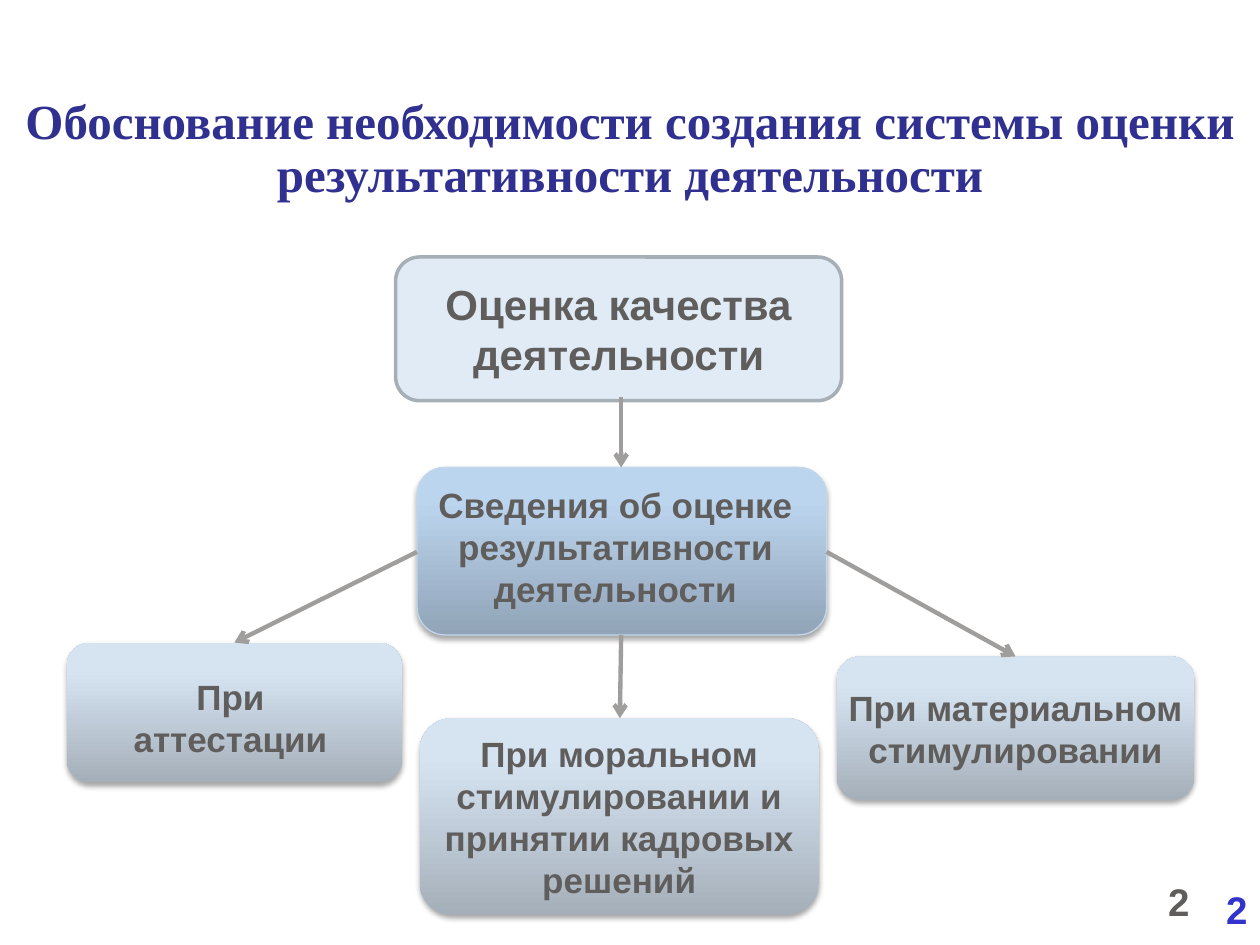
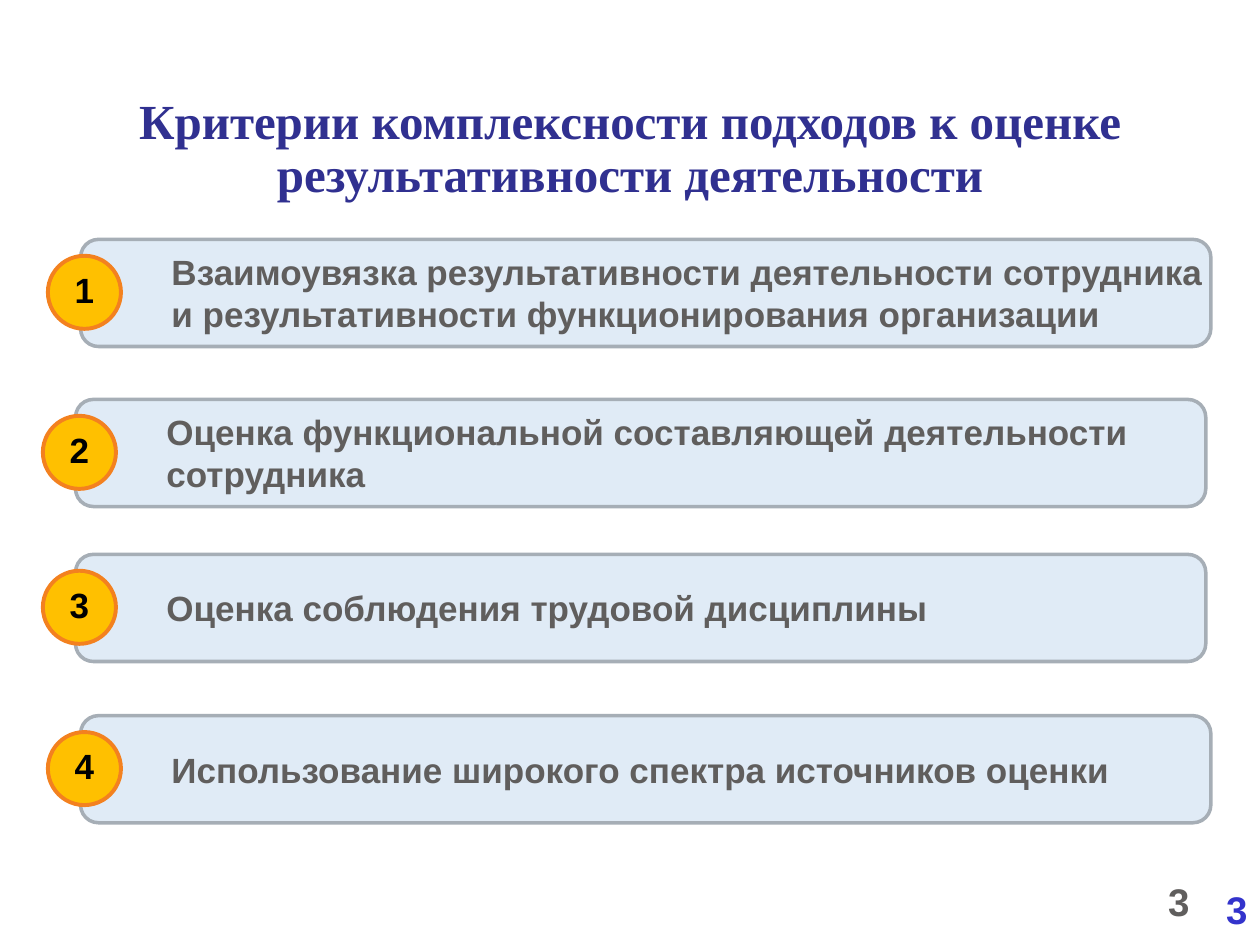
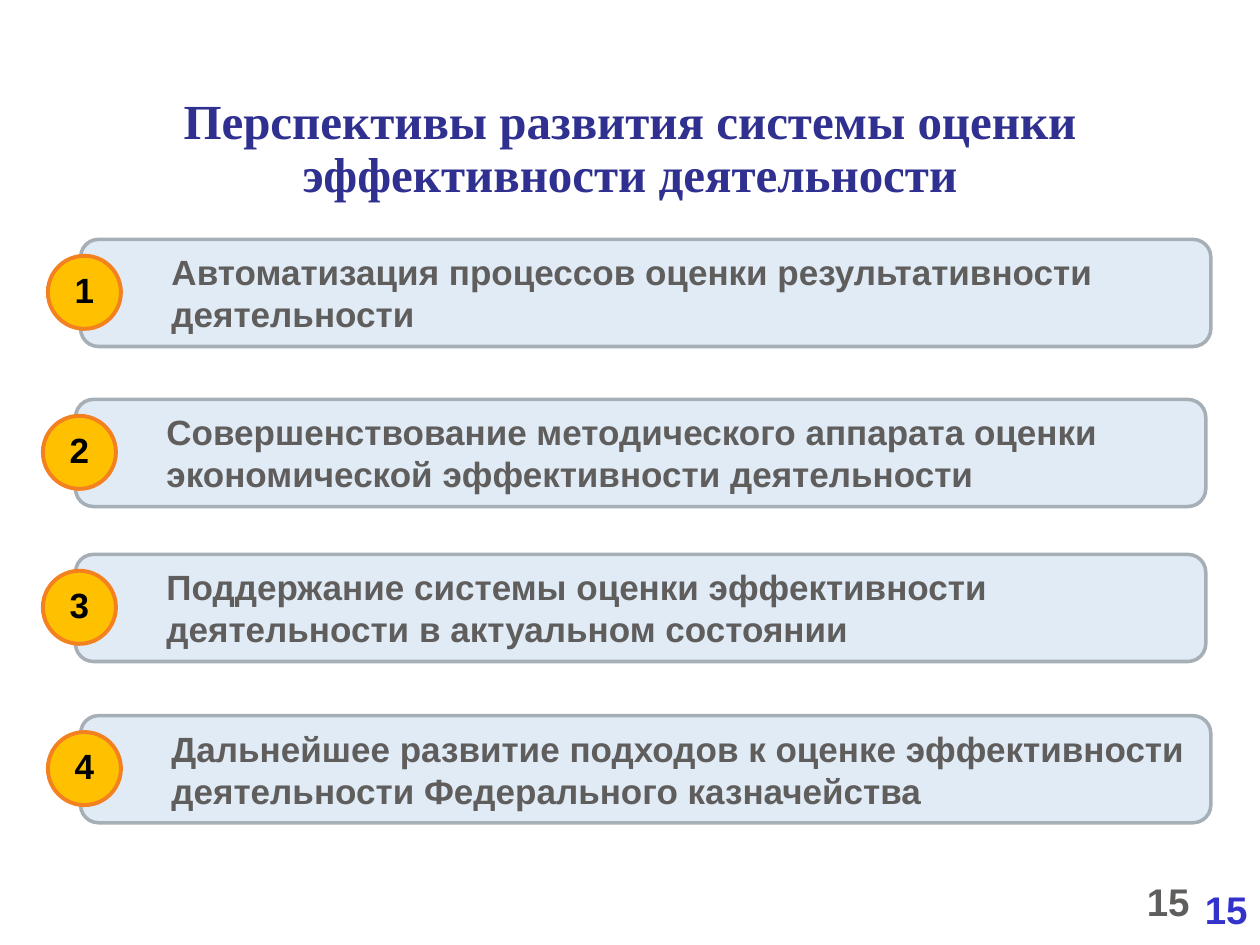
from lxml import etree
from pptx import Presentation
from pptx.dml.color import RGBColor
from pptx.enum import shapes, text
from pptx.oxml import parse_xml
from pptx.oxml.ns import nsdecls, qn
from pptx.util import Inches, Pt

TITLE_BLUE = RGBColor(0x30, 0x30, 0x90)
NUMBER_BLUE = RGBColor(0x33, 0x33, 0xCC)
TEXT_GRAY = RGBColor(0x60, 0x5E, 0x5D)
ARROW_GRAY = RGBColor(0xA0, 0x9E, 0x9D)
BLACK = RGBColor(0, 0, 0)
PANEL_FILL = RGBColor(0xE0, 0xEB, 0xF6)
PANEL_LINE = RGBColor(0xA6, 0xAE, 0xB6)
BADGE_FILL = RGBColor(0xFF, 0xC0, 0x00)
BADGE_LINE = RGBColor(0xF3, 0x81, 0x1F)
GRAY_DARK = RGBColor(0xA5, 0xAF, 0xBA)
GRAY_LIGHT = RGBColor(0xD6, 0xE4, 0xF2)
BLUE_DARK = RGBColor(0x91, 0xA4, 0xB8)
BLUE_LIGHT = RGBColor(0xBC, 0xD5, 0xEE)
BLUE_LINE = RGBColor(0xC3, 0xD7, 0xEC)

ALIGN = text.PP_ALIGN
ROUNDED = shapes.MSO_SHAPE.ROUNDED_RECTANGLE
SOFT_SHADOW = (
    f'<a:effectLst {nsdecls("a")}><a:outerShdw blurRad="40000" dist="23000" dir="5400000" '
    'rotWithShape="0"><a:srgbClr val="000000"><a:alpha val="35000"/></a:srgbClr>'
    '</a:outerShdw></a:effectLst>'
)


def write_text(box, words, size=20, color=TEXT_GRAY, font="Arial", align=ALIGN.CENTER,
               spacing=1.0, wrap=True, anchor=text.MSO_ANCHOR.MIDDLE):
    """Fill a box with bold text, one paragraph per line of words."""
    frame = box.text_frame
    frame.text = words
    frame.word_wrap = wrap
    frame.vertical_anchor = anchor
    for para in frame.paragraphs:
        para.alignment = align
        para.line_spacing = spacing
        for span in para.runs:
            span.font.name = font
            span.font.size = Pt(size)
            span.font.bold = True
            span.font.color.rgb = color


def add_flat_shape(parent, kind, place, fill, line, width):
    shape = parent.shapes.add_shape(kind, *map(Inches, place))
    shape.shadow.inherit = False
    shape.fill.solid()
    shape.fill.fore_color.rgb = fill
    shape.line.color.rgb = line
    shape.line.width = Pt(width)
    return shape


deck = Presentation()
deck.slide_width, deck.slide_height = Inches(10), Inches(7.5)

# Title and page numbers shared by every slide
headings = [
    ("Обоснование необходимости создания системы оценки результативности деятельности", 2),
    ("Критерии комплексности подходов к оценке результативности деятельности", 3),
    ("Перспективы развития системы оценки эффективности деятельности", 15),
]
pages = []
for heading, number in headings:
    page = deck.slides.add_slide(deck.slide_layouts[6])
    pages.append(page)
    title = page.shapes.add_textbox(0, Inches(0.94), Inches(10), Inches(0.97))
    title.text_frame.margin_bottom = Inches(0.52)
    write_text(title, heading, 28, TITLE_BLUE, "Times New Roman", spacing=0.9)
    for left, top, color in [(8.91, 6.92, TEXT_GRAY), (9.37, 6.98, NUMBER_BLUE)]:
        box = page.shapes.add_textbox(*map(Inches, (left, top, 0.63, 0.52)))
        write_text(box, str(number), 22, color, align=ALIGN.RIGHT, anchor=text.MSO_ANCHOR.TOP)

# Slide 1: flow from assessment to its uses
flow = pages[0]
source = add_flat_shape(flow, ROUNDED, (3.14, 2.04, 3.54, 1.14), PANEL_FILL, PANEL_LINE, 2)
write_text(source, "Оценка качества\nдеятельности", 24, wrap=False)

flow_boxes = [
    ((6.64, 5.21, 2.84, 1.14), GRAY_DARK, GRAY_LIGHT, "При материальном\nстимулировании"),
    ((0.53, 5.1, 2.66, 1.11), GRAY_DARK, GRAY_LIGHT, ""),
    ((3.31, 3.71, 3.25, 1.33), BLUE_DARK, BLUE_LIGHT, ""),
    ((3.33, 5.7, 3.17, 1.56), GRAY_DARK, GRAY_LIGHT,
     "При моральном\nстимулировании и\nпринятии кадровых\nрешений"),
]
for place, dark, light, words in flow_boxes:
    box = add_flat_shape(flow, ROUNDED, place, light, BLUE_LINE, 0.75)
    box.fill.gradient()
    box.fill.gradient_angle = 90
    for stop, color, position in zip(box.fill.gradient_stops, (dark, light), (0, 0.8)):
        stop.color.rgb = color
        stop.position = position
    if dark == GRAY_DARK:
        box.line.fill.background()
    properties = box._element.spPr
    properties.replace(properties.find(qn("a:effectLst")), parse_xml(SOFT_SHADOW))
    if words:
        write_text(box, words, wrap=False)

flow_labels = [
    ((0.85, 5.31, 1.96, 0.77), "При\nаттестации"),
    ((3.26, 3.78, 3.25, 1.11), "Сведения об оценке результативности деятельности"),
]
for place, words in flow_labels:
    write_text(flow.shapes.add_textbox(*map(Inches, place)), words)

arrows = [
    (4.93, 5.04, 4.92, 5.7),
    (3.31, 4.38, 1.86, 5.1),
    (6.56, 4.38, 8.06, 5.21),
    (4.93, 3.15, 4.93, 3.71),
]
for ends in arrows:
    arrow = flow.shapes.add_connector(shapes.MSO_CONNECTOR.STRAIGHT, *map(Inches, ends))
    arrow.line.color.rgb = ARROW_GRAY
    arrow.line.width = Pt(2.5)
    etree.SubElement(arrow.line._get_or_add_ln(), qn("a:tailEnd"), type="arrow")
    etree.SubElement(arrow._element.spPr, qn("a:effectLst"))

# Slides 2 and 3: numbered bars
bar_places = [(0.64, 1.9), (0.6, 3.17), (0.6, 4.4), (0.64, 5.68)]
criteria = [
    "Взаимоувязка результативности деятельности сотрудника\n"
    "и результативности функционирования организации",
    "Оценка функциональной составляющей деятельности\nсотрудника",
    "Оценка соблюдения трудовой дисциплины",
    "Использование широкого спектра источников оценки",
]
prospects = [
    "Автоматизация процессов оценки результативности\nдеятельности",
    "Совершенствование методического аппарата оценки\n"
    "экономической эффективности деятельности",
    "Поддержание системы оценки эффективности\nдеятельности в актуальном состоянии",
    "Дальнейшее развитие подходов к оценке эффективности\n"
    "деятельности Федерального казначейства",
]
for page, items in zip(pages[1:], (criteria, prospects)):
    for number, ((left, top), words) in enumerate(zip(bar_places, items), 1):
        group = page.shapes.add_group_shape()
        bar = add_flat_shape(group, ROUNDED, (left, top, 8.97, 0.85), PANEL_FILL, PANEL_LINE, 2)
        bar.text_frame.margin_left = Inches(0.68)
        bar.text_frame.margin_right = 0
        write_text(bar, words, align=ALIGN.LEFT)
        badge = add_flat_shape(group, shapes.MSO_SHAPE.FLOWCHART_CONNECTOR,
                               (left - 0.26, top + 0.13, 0.58, 0.58),
                               BADGE_FILL, BADGE_LINE, 2.25)
        write_text(badge, str(number), color=BLACK, spacing=0.9, wrap=False)

deck.save("out.pptx")
